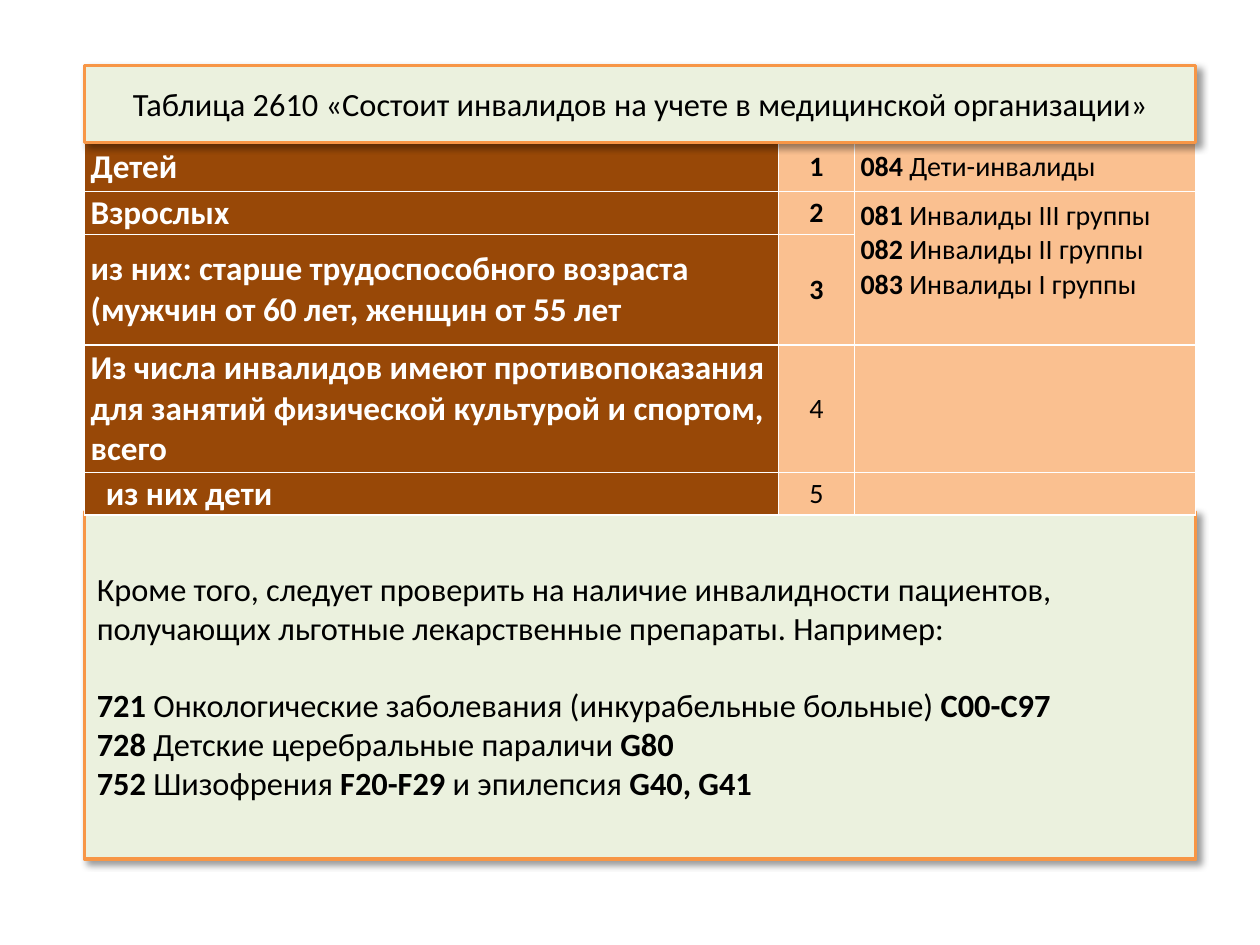
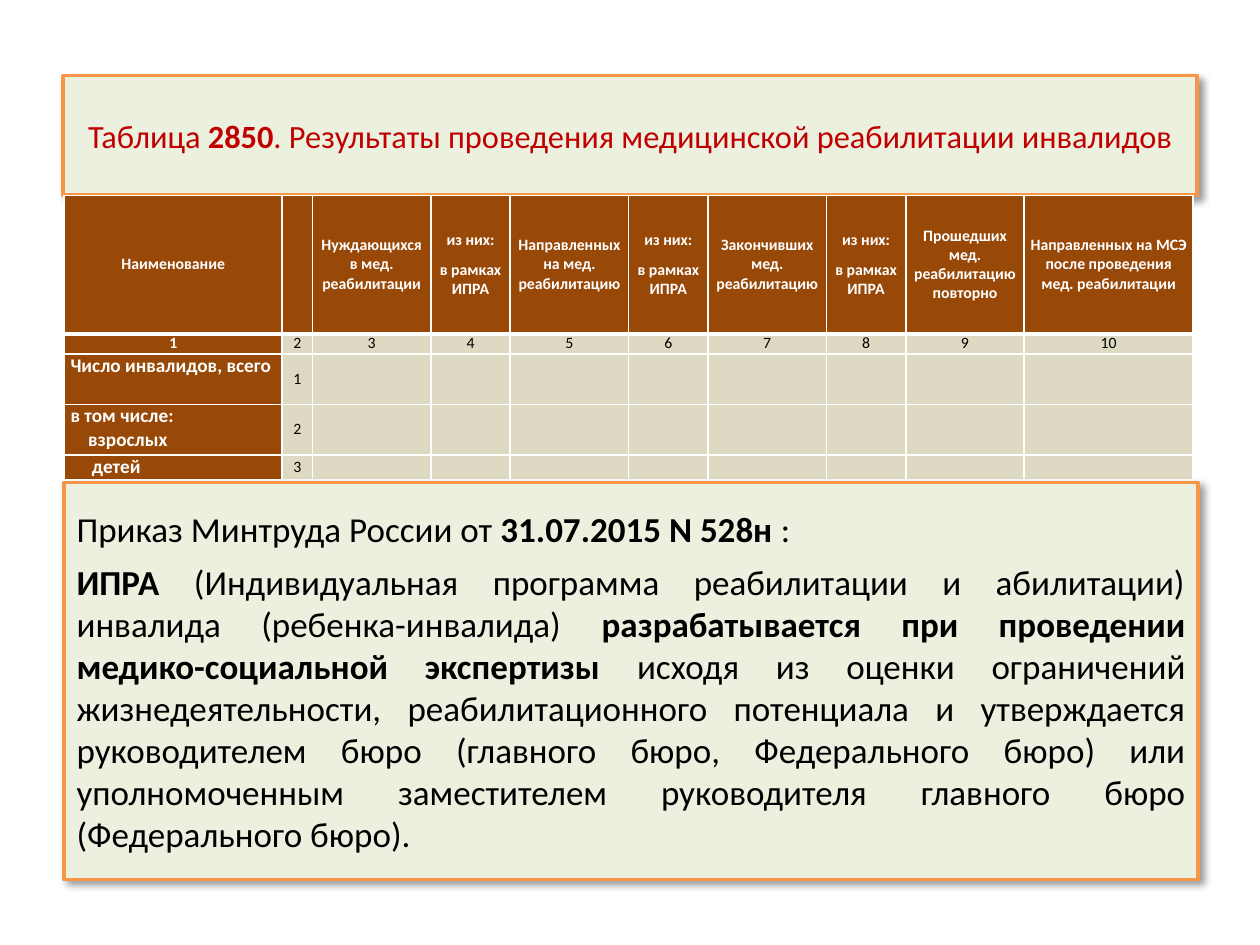
import pptx
import pptx.dml.color
import pptx.enum.shapes
import pptx.enum.text
import pptx.oxml
import pptx.oxml.ns
import pptx.util

Inches = pptx.util.Inches
Pt = pptx.util.Pt
ALIGN = pptx.enum.text.PP_ALIGN
ANCHOR = pptx.enum.text.MSO_ANCHOR

COLORS = {
    "panel": "EBF1DE",
    "outline": "F79646",
    "label": "984807",
    "peach": "FAC090",
    "sand": "DDD9C3",
    "white": "FFFFFF",
    "black": "000000",
    "red": "C00000",
}
NAMESPACE = pptx.oxml.ns.nsdecls("a")


def rgb(name):
    return pptx.dml.color.RGBColor.from_string(COLORS[name])


class SlideBuilder:
    """Holds the shared style and the slide being built."""

    font_name = "Calibri"

    def __init__(self, presentation):
        self.presentation = presentation
        self.slide = None

    def new_slide(self):
        self.slide = self.presentation.slides.add_slide(self.presentation.slide_layouts[6])

    def fill_text(self, text_frame, lines, size, color="black", align=ALIGN.LEFT, bold=False, gaps=()):
        """Add one paragraph per line; **marks** set bold, gaps are points before each line."""
        for index, line in enumerate(lines):
            paragraph = text_frame.paragraphs[0] if index == 0 else text_frame.add_paragraph()
            paragraph.alignment = align
            if index < len(gaps):
                paragraph.space_before = Pt(gaps[index])
            paragraph.font.name = self.font_name
            paragraph.font.size = Pt(size)
            paragraph.font.color.rgb = rgb(color)
            parts = line.split("**")
            if len(parts) == 1:
                paragraph.font.bold = bold
            for number, part in enumerate(parts):
                if part:
                    run = paragraph.add_run()
                    run.text = part
                    if len(parts) > 1:
                        run.font.bold = number % 2 == 1
            if not line:
                paragraph._p.get_or_add_endParaRPr().set("sz", str(int(size * 100)))

    def panel(self, left, top, width, height, lines, size=18.5, **text_style):
        """Green box with an orange outline and a soft shadow."""
        shape = self.slide.shapes.add_shape(
            pptx.enum.shapes.MSO_SHAPE.RECTANGLE,
            Inches(left), Inches(top), Inches(width), Inches(height))
        shape.fill.solid()
        shape.fill.fore_color.rgb = rgb("panel")
        shape.line.color.rgb = rgb("outline")
        shape.line.width = Pt(2)
        shape.shadow.inherit = False
        effects = shape._element.spPr.find(pptx.oxml.ns.qn("a:effectLst"))
        effects.append(pptx.oxml.parse_xml(
            f'<a:outerShdw {NAMESPACE} blurRad="{Pt(4)}" dist="{Pt(3)}" dir="2700000" rotWithShape="0">'
            f'<a:srgbClr val="{COLORS["black"]}"><a:alpha val="40000"/></a:srgbClr></a:outerShdw>'))
        text_frame = shape.text_frame
        text_frame.word_wrap = True
        text_frame.vertical_anchor = ANCHOR.MIDDLE
        self.fill_text(text_frame, lines, size, **text_style)

    def table(self, left, top, widths, heights):
        """Empty table without a banded style."""
        frame = self.slide.shapes.add_table(
            len(heights), len(widths), Inches(left), Inches(top),
            Inches(sum(widths)), Inches(sum(heights)))
        table = frame.table
        table.first_row = table.horz_banding = False
        for column, width in zip(table.columns, widths):
            column.width = Inches(width)
        for row, height in zip(table.rows, heights):
            row.height = Inches(height)
        return table

    def cell(self, cell, lines, size, fill, anchor=ANCHOR.MIDDLE, top_line=1, bottom_line=1, **text_style):
        """Fill one cell, draw its white borders and add its text."""
        cell.margin_left = cell.margin_right = Inches(0.05)
        cell.margin_top = cell.margin_bottom = 0
        cell.vertical_anchor = anchor
        cell.fill.solid()
        cell.fill.fore_color.rgb = rgb(fill)
        borders = {"lnL": 1, "lnR": 1, "lnT": top_line, "lnB": bottom_line}
        for index, (side, width) in enumerate(borders.items()):
            cell._tc.get_or_add_tcPr().insert(index, pptx.oxml.parse_xml(
                f'<a:{side} {NAMESPACE} w="{Pt(width)}"><a:solidFill>'
                f'<a:srgbClr val="{COLORS["white"]}"/></a:solidFill></a:{side}>'))
        self.fill_text(cell.text_frame, lines, size, **text_style)

    def indent(self, paragraph, distance):
        properties = paragraph._p.get_or_add_pPr()
        properties.set("marL", str(Inches(distance)))
        properties.set("indent", "0")


def build_registered_slide(builder):
    builder.new_slide()
    left, width = 0.67, 8.82

    # Codes to check
    builder.panel(left, 4.06, width, 2.76, [
        "Кроме того, следует проверить на наличие инвалидности пациентов, "
        "получающих льготные лекарственные препараты. Например:",
        "**721** Онкологические заболевания (инкурабельные больные) **C00-C97**",
        "**728** Детские церебральные параличи **G80**",
        "**752** Шизофрения **F20-F29** и эпилепсия **G40, G41**",
    ], gaps=(0, 22))

    # Table of registered people
    rows = [
        ("Детей", "**1**", ["**084** Дети-инвалиды"]),
        ("Взрослых", "**2**", ["**081** Инвалиды III группы", "**082** Инвалиды II группы",
                               "**083** Инвалиды I группы"]),
        ("из них: старше трудоспособного возраста (мужчин от 60 лет, женщин от 55 лет", "**3**", [""]),
        ("Из числа инвалидов имеют противопоказания для занятий физической культурой и спортом, всего",
         "4", [""]),
        ("из них дети", "5", [""]),
    ]
    table = builder.table(left, 1.13, [5.51, 0.6, 2.71], [0.39, 0.34, 0.88, 1.01, 0.34])
    for index, (label, number, codes) in enumerate(rows):
        builder.cell(table.cell(index, 0), [label], 19, "label", color="white", bold=True)
        builder.cell(table.cell(index, 1), [number], 16, "peach", align=ALIGN.CENTER)
        builder.cell(table.cell(index, 2), codes, 16, "peach")
    builder.indent(table.cell(4, 0).text_frame.paragraphs[0], 0.12)
    adult_codes = table.cell(1, 2)
    adult_codes.merge(table.cell(2, 2))
    adult_codes.vertical_anchor = ANCHOR.TOP
    adult_codes.margin_top = Inches(0.06)

    # Title
    builder.panel(left, 0.52, width, 0.61,
                  ["Таблица 2610 «Состоит инвалидов на учете в медицинской организации»"],
                  align=ALIGN.CENTER)


def build_rehabilitation_slide(builder):
    builder.new_slide()

    # Title
    builder.panel(0.5, 0.6, 9, 0.95,
                  ["Таблица **2850**. Результаты проведения медицинской реабилитации инвалидов"],
                  color="red", align=ALIGN.CENTER)

    # Table of results
    program = ["из них:", "в рамках ИПРА"]
    headings = [
        ["Наименование"], [""],
        ["Нуждающихся в мед. реабилитации"], program,
        ["Направленных на мед. реабилитацию"], program,
        ["Закончивших мед. реабилитацию"], program,
        ["Прошедших мед. реабилитацию повторно"],
        ["Направленных на МСЭ после проведения мед. реабилитации"],
    ]
    labels = [["Число инвалидов, всего"], ["в том числе:", "взрослых"], ["детей"]]
    widths = [1.73, 0.24] + [0.94, 0.63] * 3 + [0.94, 1.34]
    table = builder.table(0.51, 1.55, widths, [1.1, 0.16, 0.4, 0.4, 0.2])
    for column, heading in enumerate(headings):
        builder.cell(table.cell(0, column), heading, 9, "label", bottom_line=3,
                     color="white", bold=True, align=ALIGN.CENTER, gaps=(0, 6))
        first = column == 0
        builder.cell(table.cell(1, column), [str(column + 1)], 9, "label" if first else "sand",
                     ANCHOR.TOP, top_line=3, color="white" if first else "black",
                     bold=first, align=ALIGN.CENTER)
    for number, label in enumerate(labels, 1):
        builder.cell(table.cell(number + 1, 0), label, 11, "label", ANCHOR.TOP,
                     color="white", bold=True)
        for column in range(1, len(widths)):
            builder.cell(table.cell(number + 1, column), [str(number) if column == 1 else ""],
                         9, "sand", align=ALIGN.CENTER)
    builder.indent(table.cell(3, 0).text_frame.paragraphs[1], 0.14)
    builder.indent(table.cell(4, 0).text_frame.paragraphs[0], 0.17)

    # Order of the ministry
    builder.panel(0.51, 3.83, 9, 3.15, [
        "Приказ Минтруда России от **31.07.2015 N 528н **:",
        "**ИПРА** (Индивидуальная программа реабилитации и абилитации) инвалида (ребенка-инвалида) "
        "**разрабатывается при проведении медико-социальной экспертизы** исходя из оценки ограничений "
        "жизнедеятельности, реабилитационного потенциала и утверждается руководителем бюро "
        "(главного бюро, Федерального бюро) или уполномоченным заместителем руководителя "
        "главного бюро (Федерального бюро).",
    ], size=20, align=ALIGN.JUSTIFY, gaps=(0, 6))


def main():
    presentation = pptx.Presentation()
    presentation.slide_width = Inches(10)
    presentation.slide_height = Inches(7.5)
    builder = SlideBuilder(presentation)
    build_registered_slide(builder)
    build_rehabilitation_slide(builder)
    presentation.save("out.pptx")


if __name__ == "__main__":
    main()
